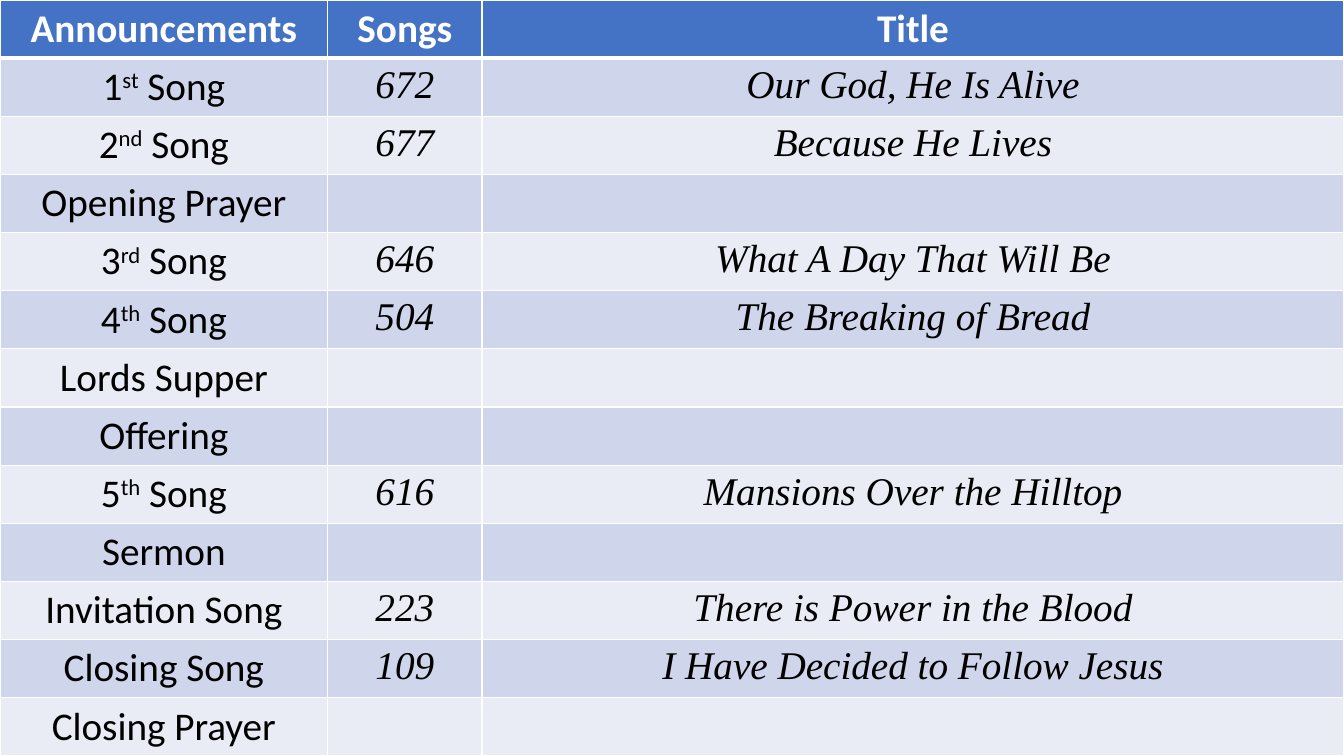
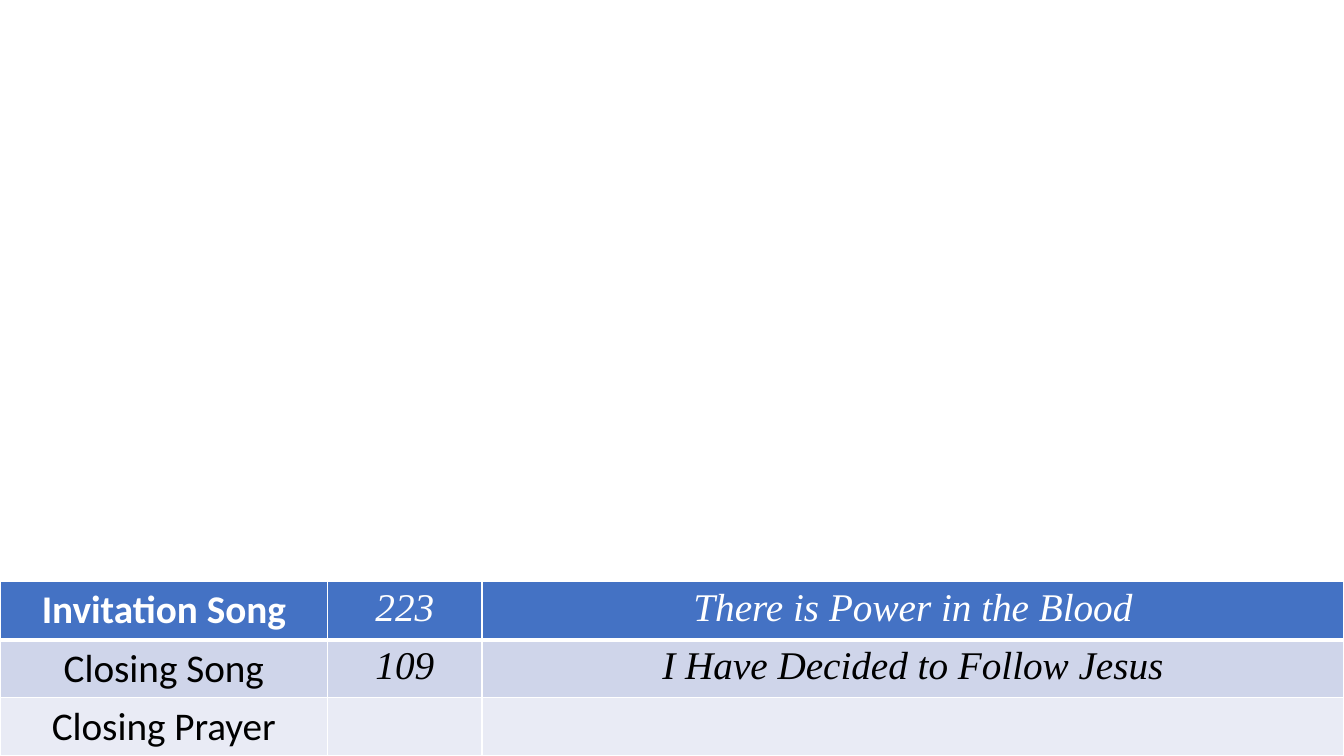
from lxml import etree
from pptx import Presentation
from pptx.dml.color import RGBColor
from pptx.enum.text import PP_ALIGN
from pptx.oxml.ns import qn
from pptx.util import Inches, Pt

CENTER = PP_ALIGN.CENTER
BLUE, BAND_DARK, BAND_LIGHT = "4472C4", "CFD5EA", "E9EBF5"
WHITE, BLACK = "FFFFFF", "000000"
SANS, SERIF = "Calibri", "Times New Roman"
COL_WIDTHS = [3.25, 1.53, 8.55]
SLIDE_H = 7.5

HEADER = ("Announcements", "Songs", "Title")
SERVICE = [
    ("1|st| Song", "672", "Our God, He Is Alive"),
    ("2|nd| Song", "677", "Because He Lives"),
    ("Opening Prayer", "", ""),
    ("3|rd| Song", "646", "What A Day That Will Be"),
    ("4|th| Song", "504", "The Breaking of Bread"),
    ("Lords Supper", "", ""),
    ("Offering", "", ""),
    ("5|th| Song", "616", "Mansions Over the Hilltop"),
    ("Sermon", "", ""),
    ("Invitation Song", "223", "There is Power in the Blood"),
    ("Closing Song", "109", "I Have Decided to Follow Jesus"),
    ("Closing Prayer", "", ""),
]
ORDER = [HEADER] + SERVICE
ROW_H = SLIDE_H / len(ORDER)


def rgb(color):
    return RGBColor.from_string(color)


def add_borders(cell, bottom):
    tcPr = cell._tc.get_or_add_tcPr()
    for side, width in (("L", 1), ("R", 1), ("T", 1), ("B", bottom)):
        ln = etree.SubElement(tcPr, qn(f"a:ln{side}"), w=str(Pt(width)))
        fill = etree.SubElement(ln, qn("a:solidFill"))
        etree.SubElement(fill, qn("a:srgbClr"), val=WHITE)


prs = Presentation()
prs.slide_width = Inches(13.33)
prs.slide_height = Inches(SLIDE_H)

for rows in (ORDER, SERVICE[-3:]):
    s = prs.slides.add_slide(prs.slide_layouts[6])
    height = ROW_H * len(rows)
    table = s.shapes.add_table(
        len(rows), len(COL_WIDTHS), 0, Inches(SLIDE_H - height),
        prs.slide_width, Inches(height)).table
    for column, width in zip(table.columns, COL_WIDTHS):
        column.width = Inches(width)

    for i, row in enumerate(rows):
        table.rows[i].height = Inches(ROW_H)
        top = i == 0
        band = BLUE if top else BAND_DARK if i % 2 else BAND_LIGHT
        for j, text in enumerate(row):
            cell = table.cell(i, j)
            add_borders(cell, 3 if top else 1)
            cell.fill.solid()
            cell.fill.fore_color.rgb = rgb(band)
            song = j > 0 and row != HEADER
            p = cell.text_frame.paragraphs[0]
            p.alignment = CENTER
            p.font.name = SERIF if song else SANS
            p.font.size = Pt(28)
            p.font.bold = top and not song
            p.font.italic = song
            p.font.color.rgb = rgb(WHITE if top else BLACK)
            if text:
                for k, part in enumerate(text.split("|")):
                    r = p.add_run()
                    r.text = part
                    if k == 1:
                        r._r.get_or_add_rPr().set("baseline", "30000")

prs.save("out.pptx")
